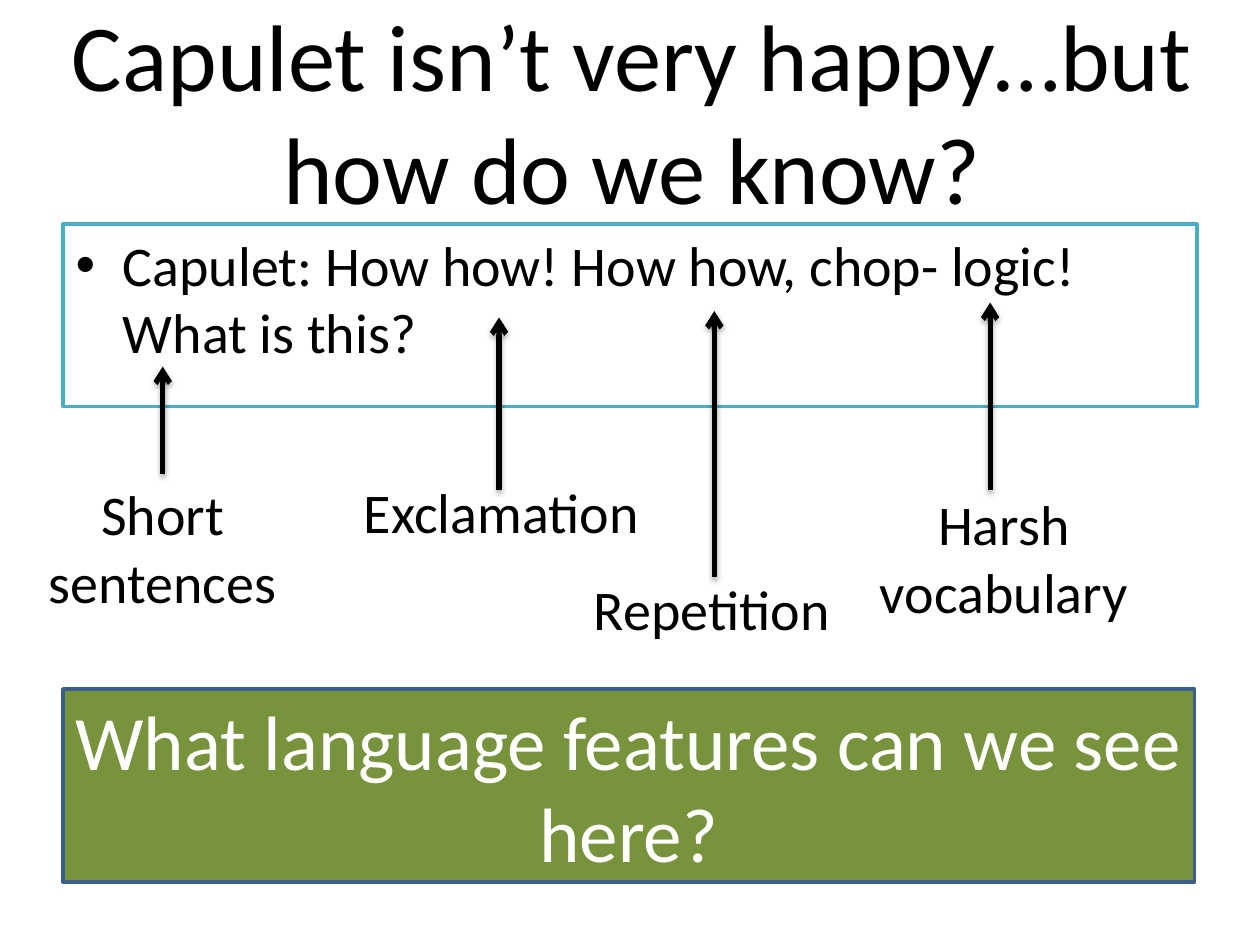
"""Build a slide that labels the language features in Capulet's line."""
from lxml.etree import fromstring
from pptx import Presentation
from pptx.dml.color import RGBColor
from pptx.enum.shapes import MSO_CONNECTOR, MSO_SHAPE
from pptx.enum.text import MSO_ANCHOR, MSO_AUTO_SIZE, PP_ALIGN
from pptx.oxml.ns import nsdecls, qn
from pptx.util import Cm, Pt

HUES = {"black": "000000", "white": "FFFFFF", "teal": "4BACC6",
        "green": "77933C", "blue": "3A5F8C"}
SHADOW = (f'<a:effectLst {nsdecls("a")}><a:outerShdw blurRad="40000" dist="23000" '
          'dir="5400000" rotWithShape="0"><a:srgbClr val="000000">'
          '<a:alpha val="35000"/></a:srgbClr></a:outerShdw></a:effectLst>')


def write(shape, text, size, hue="black", align=PP_ALIGN.CENTER):
    frame = shape.text_frame
    frame.word_wrap = True
    frame.auto_size = MSO_AUTO_SIZE.NONE
    para = frame.paragraphs[0]
    para.text = text
    para.alignment = align
    para.font.name = "Calibri"
    para.font.size = Pt(size)
    para.font.color.rgb = RGBColor.from_string(HUES[hue])


def paint(shape, fill, line):
    shape.fill.solid()
    shape.fill.fore_color.rgb = RGBColor.from_string(HUES[fill])
    shape.line.color.rgb = RGBColor.from_string(HUES[line])
    shape.line.width = Pt(2)


deck = Presentation()
deck.slide_width, deck.slide_height = Cm(25.4), Cm(19.05)
slide = deck.slides.add_slide(deck.slide_layouts[1])
shapes = slide.shapes

title = shapes.title
title.left, title.top, title.width, title.height = Cm(0.56), Cm(0.3), Cm(24.36), Cm(3.84)
write(title, "Capulet isn’t very happy…but how do we know?", 54)

quote = slide.placeholders[1]
quote.left, quote.top, quote.width, quote.height = Cm(1.27), Cm(4.52), Cm(22.86), Cm(3.68)
paint(quote, "white", "teal")
tint = quote.fill._xPr.find(qn("a:solidFill"))[0]
tint.append(fromstring(f'<a:alpha {nsdecls("a")} val="81000"/>'))
write(quote, "Capulet: How how! How how, chop- logic! What is this?", 32, align=PP_ALIGN.LEFT)

banner = shapes.add_shape(MSO_SHAPE.RECTANGLE, Cm(1.27), Cm(13.89), Cm(22.81), Cm(3.89))
banner.shadow.inherit = False
paint(banner, "green", "blue")
write(banner, "What language features can we see here?", 44, "white")
banner.text_frame.vertical_anchor = MSO_ANCHOR.MIDDLE

labels = [
    ("Short sentences", 0.03, 9.55, 3, 3.28, 9.55, 7.39),
    ("Exclamation", 6.86, 9.5, 1.63, 10.06, 9.88, 6.4),
    ("Repetition", 11.1, 11.46, 1.63, 14.4, 11.63, 6.27),
    ("Harsh vocabulary", 16.99, 9.75, 3, 19.96, 9.88, 6.1),
]
for text, left, top, height, x, start, end in labels:
    label = shapes.add_textbox(Cm(left), Cm(top), Cm(6.5), Cm(height))
    write(label, text, 32)
    label.text_frame.auto_size = MSO_AUTO_SIZE.SHAPE_TO_FIT_TEXT

    arrow = shapes.add_connector(MSO_CONNECTOR.STRAIGHT, Cm(x), Cm(start), Cm(x), Cm(end))
    if start == top:
        arrow.begin_connect(label, 0)
    arrow.line.color.rgb = RGBColor.from_string(HUES["black"])
    arrow.line.width = Pt(3)
    arrow.line._get_or_add_ln().append(fromstring(f'<a:tailEnd {nsdecls("a")} type="arrow"/>'))
    arrow._element.spPr.append(fromstring(SHADOW))

deck.save("out.pptx")
